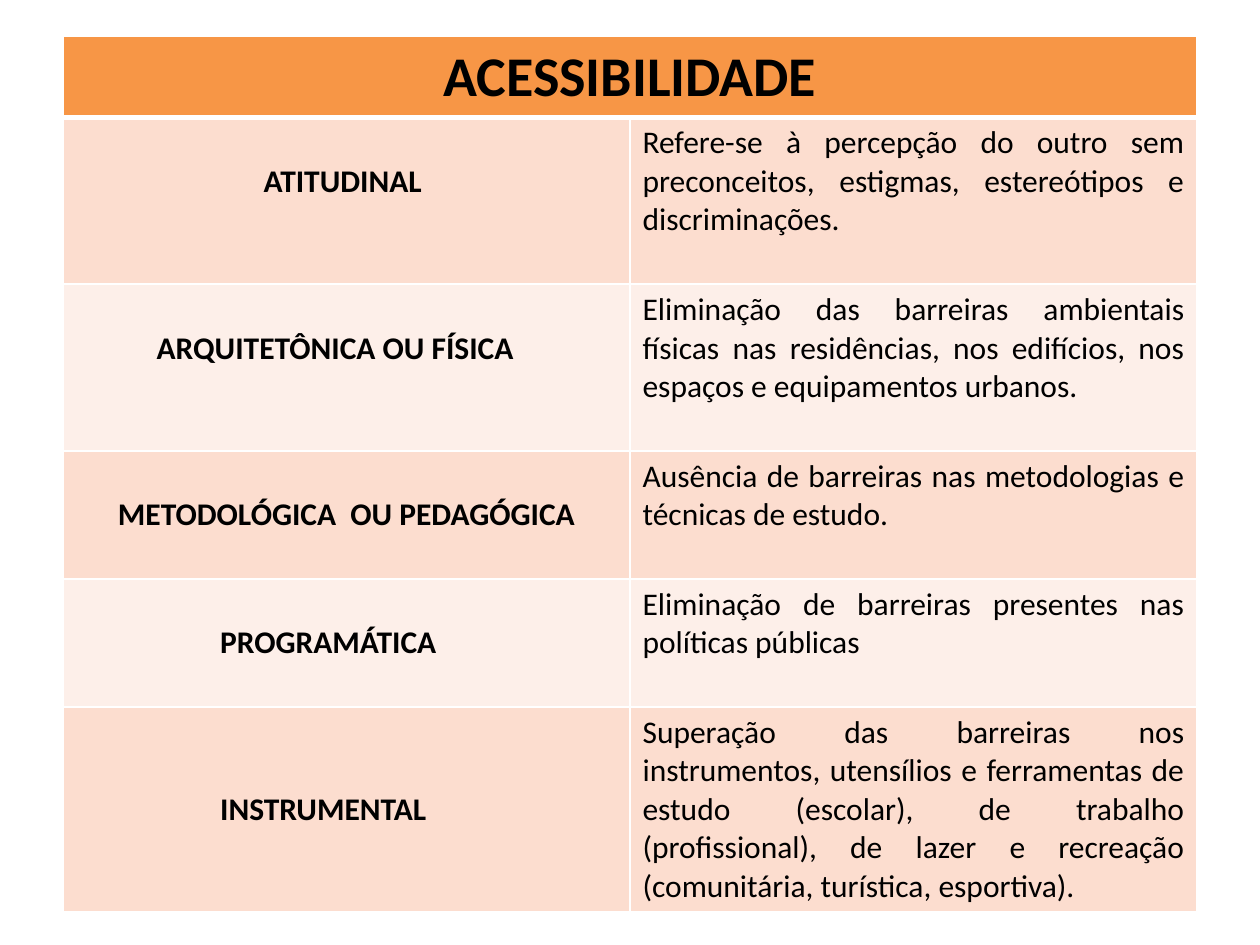
from pptx import Presentation
from pptx.dml.color import RGBColor
from pptx.enum.text import MSO_ANCHOR, PP_ALIGN
from pptx.oxml import parse_xml
from pptx.oxml.ns import nsdecls
from pptx.util import Inches, Pt

BLACK, WHITE, ORANGE = "000000", "FFFFFF", "F79646"
BANDS = ["FCDDCF", "FDEFE9"]
LINE_HEIGHT = Pt(22)
PADDING = Inches(0.05)
HEADING = {"size": Pt(32), "bold": True}
LABEL = {"size": Pt(18), "bold": True}
BODY = {"size": Pt(18), "bold": False}

ROWS = [
    ("ATITUDINAL", "Refere-se à percepção do outro sem preconceitos, estigmas, "
     "estereótipos e discriminações.", 4, 1, 0.06),
    ("ARQUITETÔNICA OU FÍSICA", "Eliminação das barreiras ambientais físicas nas "
     "residências, nos edifícios, nos espaços e equipamentos urbanos.", 4, 1, 0.18),
    ("METODOLÓGICA  OU PEDAGÓGICA", "Ausência de barreiras nas metodologias e "
     "técnicas de estudo.", 3, 1, 0),
    ("PROGRAMÁTICA", "Eliminação de barreiras presentes nas políticas públicas",
     3, 1, 0.29),
    ("INSTRUMENTAL", "Superação das barreiras nos instrumentos, utensílios e "
     "ferramentas de estudo (escolar), de trabalho (profissional), de lazer e "
     "recreação (comunitária, turística, esportiva).", 5, 2, 0.37),
]


def color(value):
    return RGBColor.from_string(value)


def set_borders(cell, bottom):
    properties = cell._tc.get_or_add_tcPr()
    widths = {"lnL": Pt(1), "lnR": Pt(1), "lnT": Pt(1), "lnB": bottom}
    for position, (side, width) in enumerate(widths.items()):
        properties.insert(position, parse_xml(
            f'<a:{side} {nsdecls("a")} w="{width}"><a:solidFill>'
            f'<a:srgbClr val="{WHITE}"/></a:solidFill></a:{side}>'))


def fill_cell(cell, text, fill, alignment, formatting, bottom=Pt(1), **margins):
    cell.fill.solid()
    cell.fill.fore_color.rgb = color(fill)
    settings = {"vertical_anchor": MSO_ANCHOR.TOP, "margin_top": PADDING,
                "margin_bottom": PADDING, **margins}
    for name, value in settings.items():
        setattr(cell, name, value)
    para = cell.text_frame.paragraphs[0]
    para.alignment = alignment
    span = para.add_run()
    span.text = text
    for name, value in {"name": "Calibri", **formatting}.items():
        setattr(span.font, name, value)
    span.font.color.rgb = color(BLACK)
    set_borders(cell, bottom)


def add_accessibility_table(page, left, top, width, height):
    table = page.shapes.add_table(len(ROWS) + 1, 2, left, top, width, height).table
    for column in table.columns:
        column.width = width // 2
    table.rows[0].height = Inches(0.64)
    heading = table.cell(0, 0)
    heading.merge(table.cell(0, 1))
    fill_cell(heading, "ACESSIBILIDADE", ORANGE, PP_ALIGN.CENTER, HEADING, Pt(3))
    for index, (label, text, lines, lines_above, shift) in enumerate(ROWS):
        row = table.rows[index + 1]
        row.height = lines * LINE_HEIGHT + 2 * PADDING
        fill = BANDS[index % 2]
        fill_cell(row.cells[0], label, fill, PP_ALIGN.CENTER, LABEL,
                  margin_top=PADDING + lines_above * LINE_HEIGHT,
                  margin_right=Inches(0.1 + shift))
        fill_cell(row.cells[1], text, fill, PP_ALIGN.JUSTIFY, BODY)


def main():
    deck = Presentation()
    deck.slide_width, deck.slide_height = Inches(10), Inches(7.5)
    page = deck.slides.add_slide(deck.slide_layouts[6])
    add_accessibility_table(page, Inches(0.5), Inches(0.29), Inches(9), Inches(6.94))
    deck.save("out.pptx")


if __name__ == "__main__":
    main()
